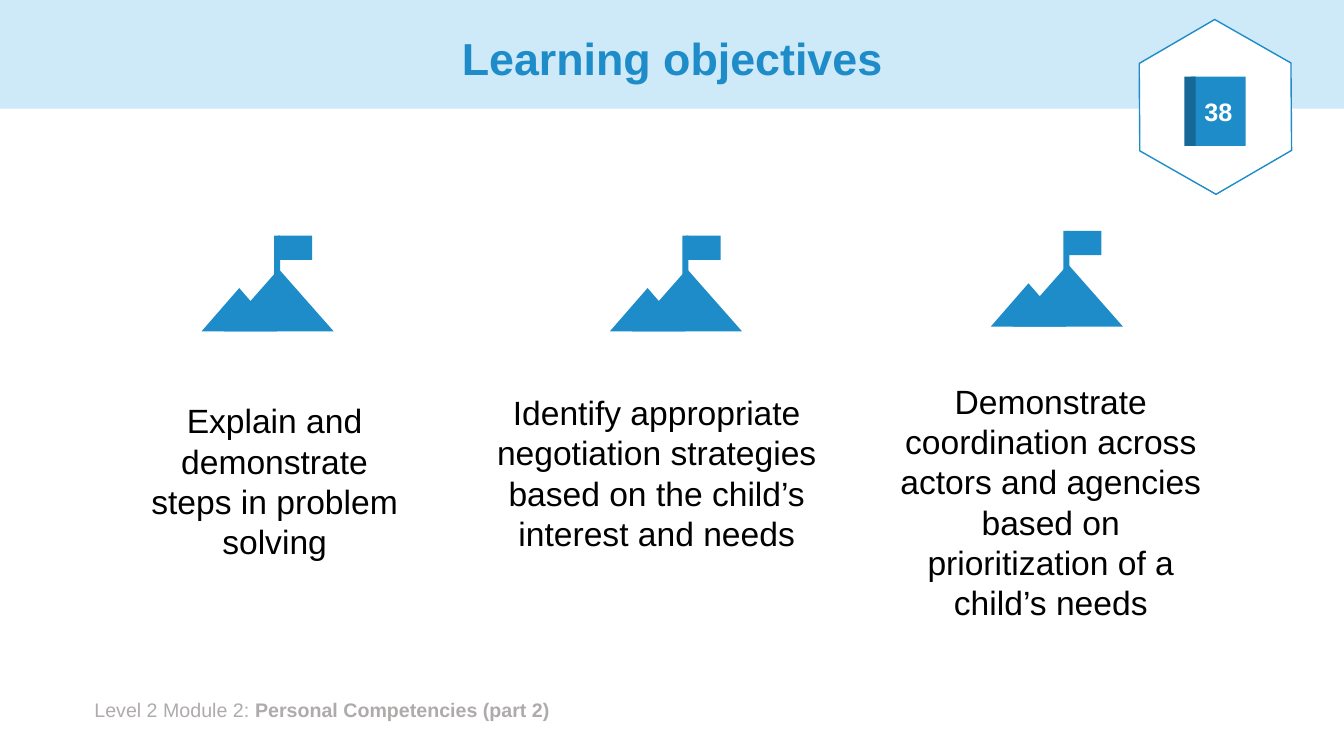
from pptx import Presentation
from pptx.dml.color import RGBColor
from pptx.enum.shapes import MSO_SHAPE as Shape
from pptx.enum.text import MSO_ANCHOR as Anchor, MSO_AUTO_SIZE as AutoSize, PP_ALIGN as Align
from pptx.util import Cm, Pt

BLUE, DARK_BLUE, PALE_BLUE = "1D8CC8", "166996", "CEE9F8"
WHITE, BLACK, GREY = "FFFFFF", "000000", "AFABAB"


def rgb(value):
    return RGBColor.from_string(value)


class Deck:
    font = "Arial"

    def __init__(self, width, height):
        self.prs = Presentation()
        self.prs.slide_width, self.prs.slide_height = Cm(width), Cm(height)

    def new_slide(self):
        self.s = self.prs.slides.add_slide(self.prs.slide_layouts[5])

    def fill_text(self, sp, runs, size, color, align=Align.CENTER, anchor=Anchor.TOP,
                  fit=AutoSize.NONE, spacing=1.0):
        """Fill a shape with one paragraph made of (text, bold) runs."""
        tf = sp.text_frame
        frame = {"word_wrap": True, "auto_size": fit, "vertical_anchor": anchor}
        for name, value in frame.items():
            setattr(tf, name, value)
        p = tf.paragraphs[0]
        p.alignment, p.line_spacing = align, spacing
        for text, bold in runs:
            r = p.add_run()
            r.text = text
            r.font.color.rgb = rgb(color)
            for name, value in {"name": self.font, "size": Pt(size), "bold": bold}.items():
                setattr(r.font, name, value)

    def title(self, box, text):
        sp = self.s.shapes.title
        sp.left, sp.top, sp.width, sp.height = map(Cm, box)
        self.fill_text(sp, [(text, True)], 32, BLUE, anchor=Anchor.MIDDLE, spacing=0.9)

    def text(self, box, runs, size, color, align=Align.CENTER):
        sp = self.s.shapes.add_textbox(*map(Cm, box))
        self.fill_text(sp, runs, size, color, align, fit=AutoSize.SHAPE_TO_FIT_TEXT)

    def shape(self, kind, box, fill, line=None, parent=None):
        sp = (parent or self.s).shapes.add_shape(kind, *map(Cm, box))
        sp.shadow.inherit = False
        sp.fill.solid()
        sp.fill.fore_color.rgb = rgb(fill)
        if line:
            sp.line.color.rgb = rgb(line)
            sp.line.width = Pt(1)
        else:
            sp.line.fill.background()
        return sp

    def band(self, box, fill):
        """Full-width strip placed behind everything else."""
        sp = self.shape(Shape.RECTANGLE, box, fill)
        self.s.shapes._spTree.insert(2, sp._element)

    def mountain(self, left, top):
        group = self.s.shapes.add_group_shape()
        parts = [
            (Shape.RECTANGLE, 1.83, 0, 0.15, 1.02),            # pole
            (Shape.RECTANGLE, 1.93, 0, 0.86, 0.61),            # flag
            (Shape.ISOSCELES_TRIANGLE, 0.56, 0.84, 2.77, 1.57),  # high peak
            (Shape.ISOSCELES_TRIANGLE, 0, 1.32, 1.9, 1.09),    # low peak
        ]
        for kind, dx, dy, w, h in parts:
            self.shape(kind, (left + dx, top + dy, w, h), BLUE, parent=group)

    def page_badge(self, number):
        group = self.s.shapes.add_group_shape()
        hexagon = self.shape(Shape.HEXAGON, (28.42, 0.79, 4.42, 3.81), WHITE, BLUE, group)
        hexagon.adjustments[0], hexagon.adjustments[1] = 0.29, 1.155
        hexagon.rotation = 29.7
        book = self.shape(Shape.RECTANGLE, (30.02, 1.93, 1.37, 1.75), BLUE, parent=group)
        for side in ("left", "right", "top", "bottom"):
            setattr(book.text_frame, f"margin_{side}", 0)
        self.fill_text(book, [(number, True)], 18, WHITE, anchor=Anchor.MIDDLE)
        self.shape(Shape.RECTANGLE, (29.85, 1.93, 0.28, 1.75), DARK_BLUE, parent=group)


def main():
    deck = Deck(33.87, 19.05)
    deck.new_slide()

    # Header and footer
    deck.band((0, 0, 33.87, 2.74), PALE_BLUE)
    deck.title((2.34, 0.33, 29.21, 2.41), "Learning objectives")
    deck.text((2.13, 17.45, 21.74, 0.86),
              [("Level 2 Module 2: ", False), ("Personal Competencies (part 2)", True)],
              14, GREY, Align.LEFT)

    # Objectives: icon corner, text box, wording
    objectives = [
        ((5.08, 5.94), (3.35, 9.96, 7.14, 4.37),
         "Explain and demonstrate steps in problem solving"),
        ((15.37, 5.94), (12.22, 9.75, 8.66, 4.37),
         "Identify appropriate negotiation strategies based on the child’s interest and needs"),
        ((24.97, 5.82), (22.15, 9.47, 8.66, 6.4),
         "Demonstrate coordination across actors and agencies based on prioritization "
         "of a child’s needs"),
    ]
    for corner, box, wording in objectives:
        deck.mountain(*corner)
        deck.text(box, [(wording, False)], 24, BLACK)

    # Page number
    deck.page_badge("38")

    deck.prs.save("out.pptx")


if __name__ == "__main__":
    main()
